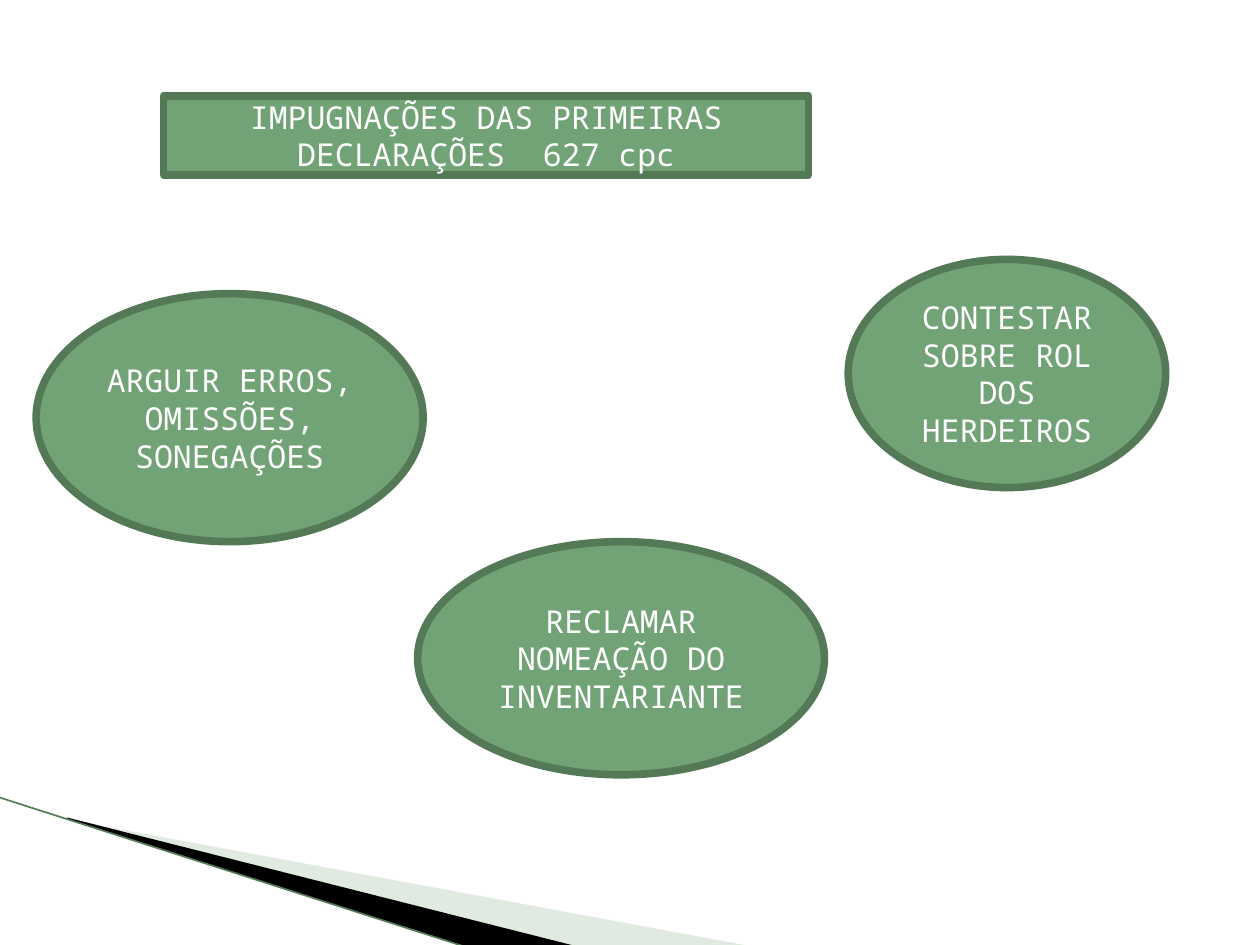
from dataclasses import dataclass

import pptx
import pptx.dml.color
import pptx.enum.shapes
import pptx.enum.text
import pptx.oxml
import pptx.oxml.ns
import pptx.util
from pptx.util import Cm


def rgb(value):
    return pptx.dml.color.RGBColor.from_string(value)


@dataclass(frozen=True)
class Theme:
    panel = rgb("72A376")
    outline = rgb("547957")
    text = rgb("FFFFFF")
    pale_wedge = rgb("B3CBB5")
    dark_wedge = rgb("000000")
    font = "Noto Sans Mono"
    size = pptx.util.Pt(18)
    outline_width = pptx.util.Pt(4.33)
    edge_width = pptx.util.Pt(0.95)


THEME = Theme()


def style_panel(panel, text):
    panel.fill.solid()
    panel.fill.fore_color.rgb = THEME.panel
    panel.line.color.rgb = THEME.outline
    panel.line.width = THEME.outline_width
    frame = panel.text_frame
    frame.text = text
    frame.word_wrap = True
    frame.auto_size = pptx.enum.text.MSO_AUTO_SIZE.NONE
    frame.vertical_anchor = pptx.enum.text.MSO_ANCHOR.MIDDLE
    paragraph = frame.paragraphs[0]
    paragraph.alignment = pptx.enum.text.PP_ALIGN.CENTER
    paragraph.font.name = THEME.font
    paragraph.font.size = THEME.size
    paragraph.font.color.rgb = THEME.text


def place_heading(slide, box, text):
    heading = slide.shapes.title
    heading.left, heading.top, heading.width, heading.height = map(Cm, box)
    style_panel(heading, text)


def add_ground(slide, box, text):
    ground = slide.shapes.add_shape(
        pptx.enum.shapes.MSO_SHAPE.OVAL, *map(Cm, box))
    ground.shadow.inherit = False
    style_panel(ground, text)


def add_wedge(slide, left, top, points, color):
    corners = [(Cm(left + x), Cm(top + y)) for x, y in points]
    builder = slide.shapes.build_freeform(*corners[0])
    builder.add_line_segments(corners[1:], close=True)
    wedge = builder.convert_to_shape()
    wedge.shadow.inherit = False
    wedge.fill.solid()
    wedge.fill.fore_color.rgb = color
    wedge.line.fill.background()
    return wedge


def add_corner_decoration(slide, left, top):
    pale = add_wedge(
        slide, left, top,
        [(1.4, 0.45), (15.11, 2.99), (11.58, 2.99), (1.4, 0.43)],
        THEME.pale_wedge)
    tint = pale.fill._xPr.find(".//" + pptx.oxml.ns.qn("a:srgbClr"))
    tint.append(pptx.oxml.parse_xml(
        f'<a:alpha {pptx.oxml.ns.nsdecls("a")} val="40000"/>'))
    add_wedge(
        slide, left, top,
        [(1.35, 0.4), (11.6, 2.99), (9.45, 3.02), (1.37, 0.43)],
        THEME.dark_wedge)
    edge = slide.shapes.add_connector(
        pptx.enum.shapes.MSO_CONNECTOR.STRAIGHT,
        Cm(left), Cm(top), Cm(left + 9.42), Cm(top + 3.02))
    edge.line.color.rgb = THEME.outline
    edge.line.width = THEME.edge_width
    edge._element.spPr.append(pptx.oxml.parse_xml(
        f'<a:effectLst {pptx.oxml.ns.nsdecls("a")}/>'))


def main():
    presentation = pptx.Presentation()
    presentation.slide_width = Cm(25.4)
    presentation.slide_height = Cm(19.05)
    slide = presentation.slides.add_slide(presentation.slide_layouts[5])

    add_corner_decoration(slide, 0, 16.08)
    place_heading(slide, (3.3, 1.93, 13, 1.6),
                  "IMPUGNAÇÕES DAS PRIMEIRAS DECLARAÇÕES  627 cpc")
    grounds = [
        ((0.73, 5.92, 7.8, 5), "ARGUIR ERROS, OMISSÕES, SONEGAÇÕES"),
        ((8.42, 10.92, 8.2, 4.7), "RECLAMAR NOMEAÇÃO DO INVENTARIANTE"),
        ((17.1, 5.23, 6.4, 4.6), "CONTESTAR SOBRE ROL DOS HERDEIROS"),
    ]
    for box, text in grounds:
        add_ground(slide, box, text)

    presentation.save("out.pptx")


if __name__ == "__main__":
    main()
